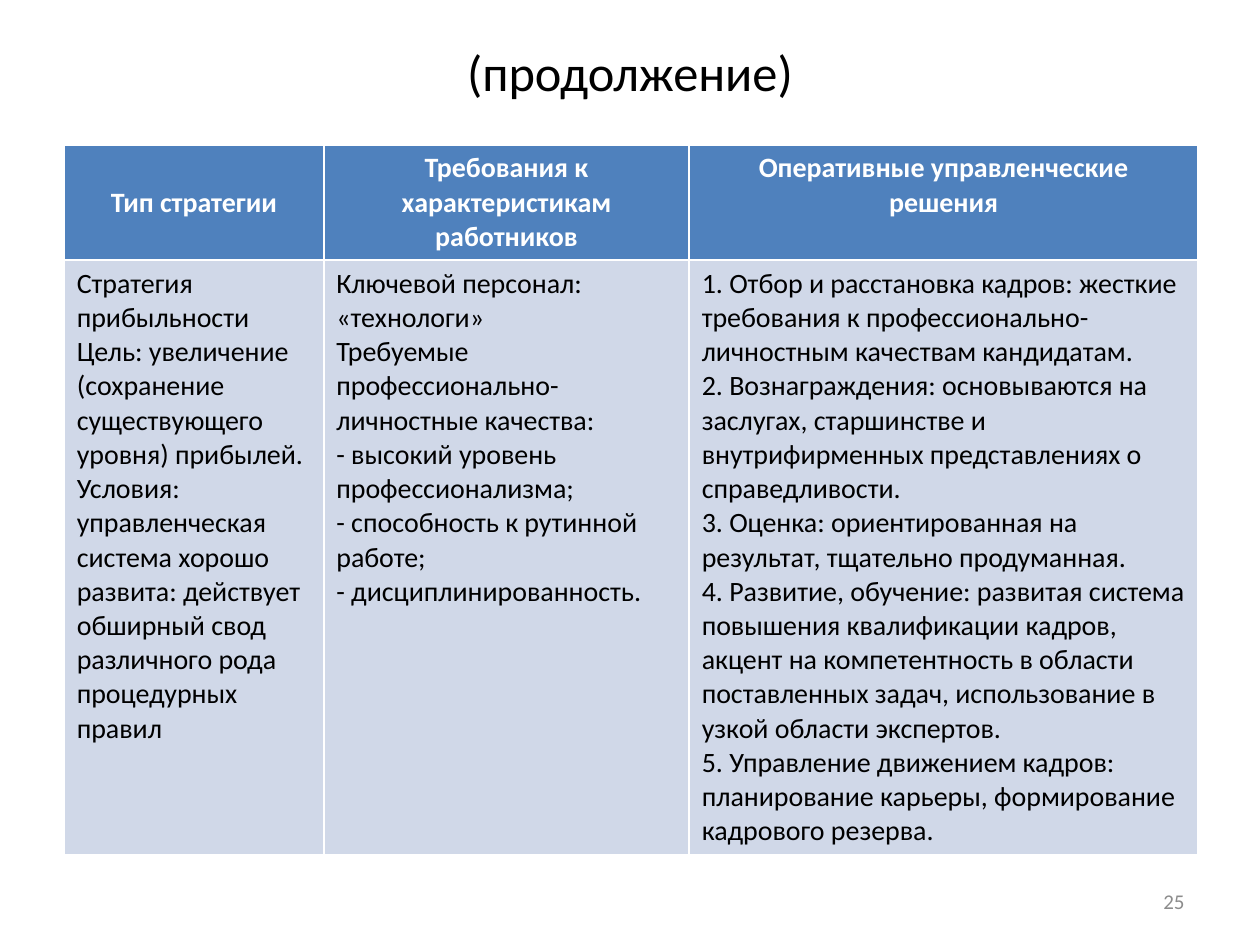
import pptx
import pptx.util
import pptx.dml.color
import pptx.enum.text

Inches = pptx.util.Inches
Pt = pptx.util.Pt
RGBColor = pptx.dml.color.RGBColor
Align = pptx.enum.text.PP_ALIGN
Anchor = pptx.enum.text.MSO_ANCHOR

BLACK = RGBColor(0, 0, 0)
WHITE = RGBColor(255, 255, 255)
GRAY = RGBColor(0x8C, 0x8C, 0x8C)
BLUE = RGBColor(0x4F, 0x81, 0xBD)
PALE = RGBColor(0xD0, 0xD8, 0xE8)

WIDTHS = [2.06, 2.9, 4.04]
HEIGHTS = [0.9, 4.7]
HEADS = [
    "Тип стратегии",
    "Требования к характеристикам работников",
    "Оперативные управленческие решения",
]
BODY = [
    ["Стратегия прибыльности Цель: увеличение (сохранение существующего "
     "уровня) прибылей. Условия: управленческая система хорошо развита: "
     "действует обширный свод различного рода процедурных правил"],
    ["Ключевой персонал: «технологи»",
     "Требуемые профессионально-личностные качества:",
     "- высокий уровень профессионализма;",
     "- способность к рутинной работе;",
     "- дисциплинированность."],
    ["1. Отбор и расстановка кадров: жесткие требования к "
     "профессионально-личностным качествам кандидатам.",
     "2. Вознаграждения: основываются на заслугах, старшинстве и "
     "внутрифирменных представлениях о справедливости.",
     "3. Оценка: ориентированная на результат, тщательно продуманная.",
     "4. Развитие, обучение: развитая система повышения квалификации "
     "кадров, акцент на компетентность в области поставленных задач, "
     "использование в узкой области экспертов.",
     "5. Управление движением кадров: планирование карьеры, "
     "формирование кадрового резерва."],
]


def write(frame, lines, size, color, align, bold=False):
    frame.word_wrap = True
    for i, line in enumerate(lines):
        para = frame.add_paragraph() if i else frame.paragraphs[0]
        para.alignment = align
        run = para.add_run()
        run.text = line
        font = run.font
        font.name = "Calibri"
        font.size = Pt(size)
        font.bold = bold
        font.color.rgb = color


def add_title(slide, text):
    title = slide.shapes.title
    title.left, title.top = Inches(0.5), Inches(0.3)
    title.width, title.height = Inches(9), Inches(0.54)
    frame = title.text_frame
    frame.auto_size = pptx.enum.text.MSO_AUTO_SIZE.NONE
    frame.vertical_anchor = Anchor.MIDDLE
    write(frame, [text], 28.8, BLACK, Align.CENTER)


def fill_cell(cell, lines, fill, color, align, bold):
    cell.fill.solid()
    cell.fill.fore_color.rgb = fill
    write(cell.text_frame, lines, 16, color, align, bold)


def add_grid(slide):
    table = slide.shapes.add_table(
        2, len(HEADS), Inches(0.51), Inches(1.15),
        Inches(sum(WIDTHS)), Inches(sum(HEIGHTS))).table
    for row, high in zip(table.rows, HEIGHTS):
        row.height = Inches(high)
    for col, (wide, head, body) in enumerate(zip(WIDTHS, HEADS, BODY)):
        table.columns[col].width = Inches(wide)
        fill_cell(table.cell(0, col), [head], BLUE, WHITE, Align.CENTER, True)
        fill_cell(table.cell(1, col), body, PALE, BLACK, Align.LEFT, False)
    table.cell(0, 0).vertical_anchor = Anchor.MIDDLE


def add_number(slide, text):
    box = slide.shapes.add_textbox(
        Inches(7.17), Inches(6.95), Inches(2.33), Inches(0.4))
    box.text_frame.vertical_anchor = Anchor.MIDDLE
    write(box.text_frame, [text], 12, GRAY, Align.RIGHT)


def main():
    deck = pptx.Presentation()
    deck.slide_width, deck.slide_height = Inches(10), Inches(7.5)
    slide = deck.slides.add_slide(deck.slide_layouts[5])
    add_title(slide, "(продолжение)")
    add_grid(slide)
    add_number(slide, "25")
    deck.save("out.pptx")


if __name__ == "__main__":
    main()
